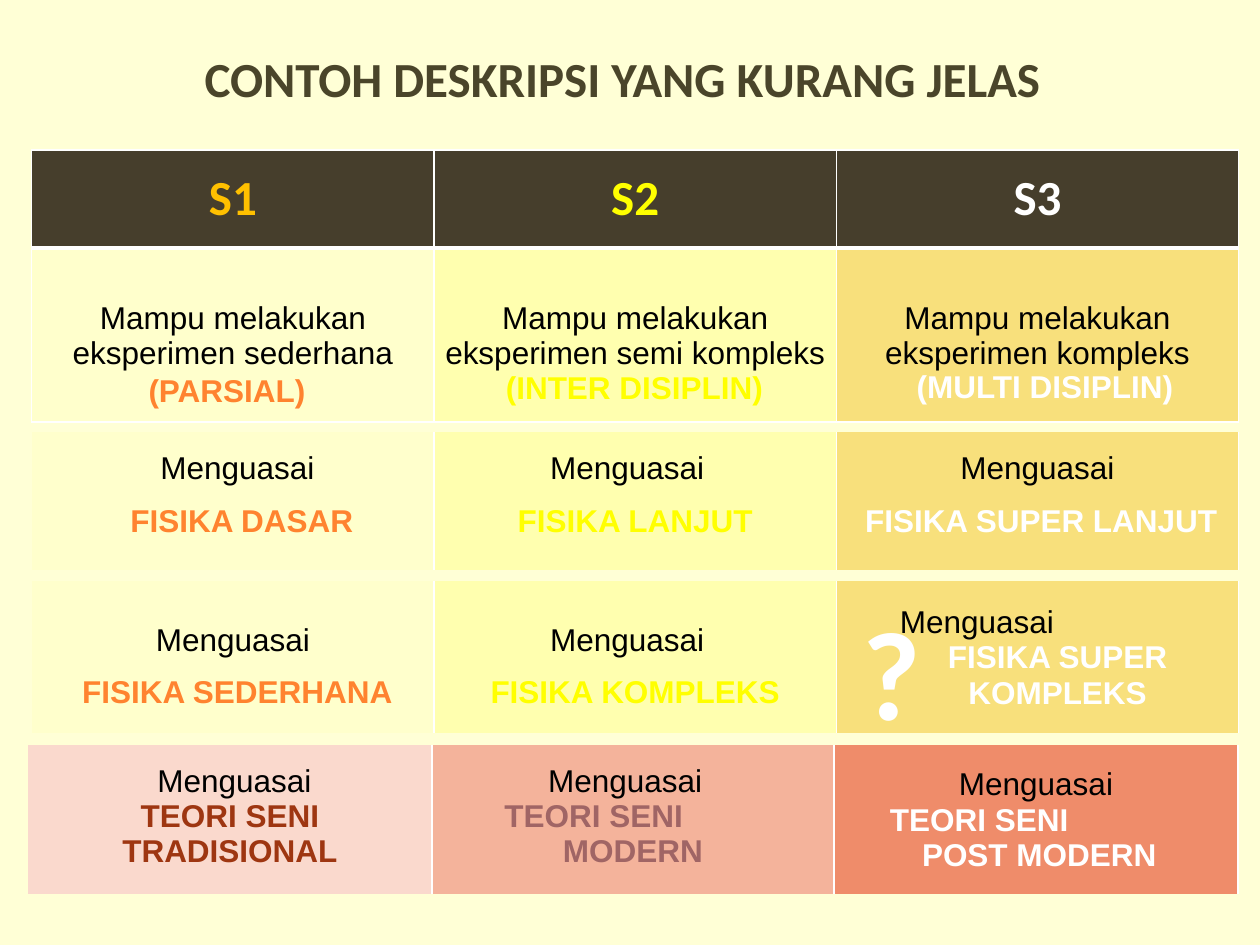
from collections import namedtuple

from lxml import etree
from pptx import Presentation
from pptx.dml.color import RGBColor
from pptx.enum.text import MSO_ANCHOR, PP_ALIGN
from pptx.oxml.ns import qn
from pptx.util import Cm, Pt

TOP, MIDDLE = MSO_ANCHOR.TOP, MSO_ANCHOR.MIDDLE
LEFT, CENTER = PP_ALIGN.LEFT, PP_ALIGN.CENTER

CREAM = RGBColor(0xFF, 0xFF, 0xD6)
BROWN = RGBColor(0x46, 0x3E, 0x2C)
OLIVE = RGBColor(0x4A, 0x45, 0x2A)
BLACK = RGBColor(0, 0, 0)
WHITE = RGBColor(0xFF, 0xFF, 0xFF)
GOLD = RGBColor(0xFF, 0xC0, 0x00)
YELLOW = RGBColor(0xFF, 0xFF, 0x00)
ORANGE = RGBColor(0xFF, 0x83, 0x2F)
RUST = RGBColor(0x9E, 0x36, 0x11)
MAUVE = RGBColor(0xA0, 0x65, 0x65)
YELLOWS = [RGBColor(0xFF, 0xFF, 0xCC), RGBColor(0xFF, 0xFF, 0xAF), RGBColor(0xF8, 0xE0, 0x7C)]
REDS = [RGBColor(0xFA, 0xD9, 0xCD), RGBColor(0xF4, 0xB3, 0x9B), RGBColor(0xEF, 0x8C, 0x6A)]

NO_STYLE = "{2D5ABB26-0587-4C30-8999-92F81FD0307C}"
TIGHT = (0.03, 0.03, 0.03, 0)
ROOMY = (0.25, 0.13, 0.25, 0.13)

Line = namedtuple("Line", "text color bold indent spacing align", defaults=(True, 0, 1, CENTER))
Cell = namedtuple("Cell", "lines fill anchor borders", defaults=(None, MIDDLE, {}))


def plain(text, indent=0, spacing=1, align=CENTER):
    """Return a black line in regular weight."""
    return Line(text, BLACK, False, indent, spacing, align)


class Deck:
    """Holds the text style and the current slide."""

    body, heading = ("Arial", 18), ("Calibri", 28)

    def __init__(self, s):
        """Keep the slide that is drawn on."""
        self.s = s

    def add_lines(self, tf, lines, style):
        """Add one paragraph for each line."""
        for i, line in enumerate(lines):
            p = tf.paragraphs[0] if i == 0 else tf.add_paragraph()
            p.alignment, p.line_spacing = line.align, line.spacing
            if line.indent:
                p._p.get_or_add_pPr().set("marL", str(Cm(line.indent)))
            for j, part in enumerate(line.text.split("\n")):
                if j:
                    p.add_line_break()
                r = p.add_run()
                r.text = part
                r.font.name, r.font.size = style[0], Pt(style[1])
                r.font.bold, r.font.color.rgb = line.bold, line.color

    def text(self, x, y, w, h, line, style):
        """Add a text box with one line."""
        tf = self.s.shapes.add_textbox(Cm(x), Cm(y), Cm(w), Cm(h)).text_frame
        tf.word_wrap = True
        self.add_lines(tf, [line], style)

    def border(self, cell, widths):
        """Draw white borders on the given sides of a cell."""
        tcPr = cell._tc.get_or_add_tcPr()
        for side in "LRTB":
            if side in widths:
                ln = etree.SubElement(tcPr, qn(f"a:ln{side}"), w=str(Pt(widths[side])))
                fill = etree.SubElement(ln, qn("a:solidFill"))
                etree.SubElement(fill, qn("a:srgbClr"), val=str(WHITE))

    def table(self, x, y, widths, heights, rows, heading=False):
        """Add a table, with an optional heading row."""
        shape = self.s.shapes.add_table(len(heights), len(widths), Cm(x), Cm(y),
                                        Cm(sum(widths)), Cm(sum(heights)))
        table = shape.table
        table.first_row = table.horz_banding = False
        table._tbl.tblPr.find(qn("a:tableStyleId")).text = NO_STYLE
        for column, w in zip(table.columns, widths):
            column.width = Cm(w)
        for i, (h, row) in enumerate(zip(heights, rows)):
            table.rows[i].height = Cm(h)
            top = heading and i == 0
            for j, data in enumerate(row):
                cell = table.cell(i, j)
                margins = [Cm(m) for m in (ROOMY if top else TIGHT)]
                cell.margin_left, cell.margin_top, cell.margin_right, cell.margin_bottom = margins
                cell.vertical_anchor = data.anchor
                self.border(cell, data.borders)
                if data.fill is None:
                    cell.fill.background()
                else:
                    cell.fill.solid()
                    cell.fill.fore_color.rgb = data.fill
                self.add_lines(cell.text_frame, data.lines, self.heading if top else self.body)

    def band(self, x, y, widths, height, fills, anchors, contents):
        """Add a one-row table with white lines between the columns."""
        sides = [{"R": 1}, {"L": 1, "R": 1}, {"L": 1, "R": 1}]
        row = [Cell(*c) for c in zip(contents, fills, anchors, sides)]
        self.table(x, y, widths, [height], [row])


def main():
    """Build the slide and save it."""
    prs = Presentation()
    prs.slide_width, prs.slide_height = Cm(25.4), Cm(19.05)
    s = prs.slides.add_slide(prs.slide_layouts[6])
    s.background.fill.solid()
    s.background.fill.fore_color.rgb = CREAM
    deck = Deck(s)
    x, widths = 0.64, [8.11] * 3

    head_lines = {"L": 1, "R": 1, "T": 1, "B": 3}
    body_lines = {"L": 1, "R": 1, "T": 3, "B": 1}
    levels = [("S1", GOLD), ("S2", YELLOW), ("S3", WHITE)]
    skills = ["sederhana", "semi kompleks", "kompleks"]
    deck.table(x, 3.02, widths, [1.98, 3.51], [
        [Cell([Line(*level)], BROWN, MIDDLE, head_lines) for level in levels],
        [Cell([plain(f"Mampu melakukan eksperimen {skill}")], fill, MIDDLE, body_lines)
         for skill, fill in zip(skills, YELLOWS)],
    ], heading=True)

    wide = plain("Menguasai", 0, 1.5)
    shifted = plain("Menguasai", 0.18, 1.5)
    left = plain("Menguasai", 2.31, 1.5, LEFT)
    deck.band(x, 8.71, widths, 2.79, YELLOWS, [TOP] * 3, [
        [shifted, Line("FISIKA DASAR", ORANGE, True, 0.36, 1.5)],
        [left, Line("FISIKA LANJUT", YELLOW, True, 0, 1.5)],
        [wide, Line("FISIKA SUPER LANJUT", WHITE, True, 0.15, 1.5)],
    ])
    deck.band(x, 11.71, widths, 3.07, YELLOWS, [MIDDLE] * 3, [
        [wide, Line("FISIKA SEDERHANA", ORANGE, True, 0.18, 1.5)],
        [left, Line("FISIKA KOMPLEKS", YELLOW, True, 0, 1.5)],
        [plain("Menguasai", 1.25, 1, LEFT), Line("FISIKA SUPER KOMPLEKS", WHITE, True, 0.81)],
    ])
    deck.band(0.56, 15.01, [8.15, 8.1, 8.15], 3.02, REDS, [TOP, TOP, MIDDLE], [
        [shifted, Line("TEORI SENI\nTRADISIONAL", RUST)],
        [left, Line("TEORI SENI", MAUVE, True, 1.43, 1, LEFT), Line("MODERN", MAUVE)],
        [plain("Menguasai"), Line("TEORI SENI", WHITE, True, 1.1, 1, LEFT),
         Line("POST MODERN", WHITE, True, 0.13)],
    ])

    deck.text(16.08, 11.86, 3.81, 3.33, Line("?", WHITE), ("Calibri", 72))
    for left_edge, top, w, h, scope in [
        (1.12, 7.24, 6.91, 1.27, Line("(PARSIAL)", ORANGE)),
        (17.65, 7.21, 6.83, 1.19, Line("(MULTI DISIPLIN)", WHITE)),
        (9.4, 7.11, 6.78, 1.4, Line("(INTER DISIPLIN)", YELLOW)),
    ]:
        deck.table(left_edge, top, [w], [h], [[Cell([scope])]])
    deck.text(1.75, 0.86, 21.59, 1.45, Line("CONTOH DESKRIPSI YANG KURANG JELAS", OLIVE), deck.heading)
    prs.save("out.pptx")


if __name__ == "__main__":
    main()
